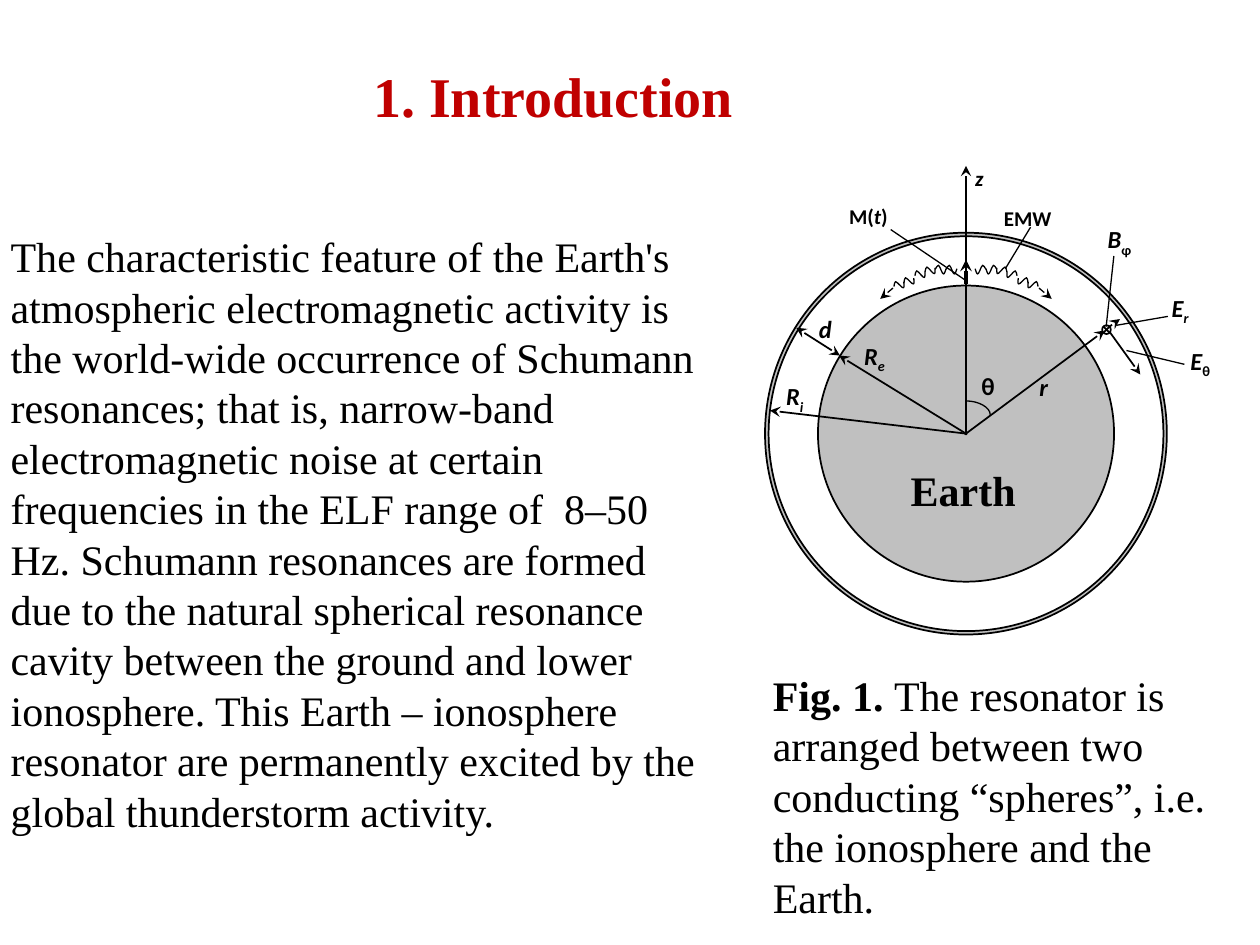
from lxml import etree
from pptx import Presentation
from pptx.dml.color import RGBColor
from pptx.enum import shapes, text
from pptx.oxml import ns
from pptx.util import Pt

COLORS = {"ink": "000000", "title": "C00000", "earth": "C0C0C0", "paper": "FFFFFF"}
SERIF, SANS = "Times New Roman", "Calibri"


def color(name):
    return RGBColor.from_string(COLORS[name])


def place(shape, box):
    shape.left, shape.top, shape.width, shape.height = (Pt(length) for length in box)


def write(shape, runs, size, font_name, ink="ink", grow=False):
    """Fill one paragraph from (text, style) pairs; style letters: b, i, s for subscript."""
    frame = shape.text_frame
    frame.word_wrap = True
    frame.vertical_anchor = text.MSO_ANCHOR.TOP
    frame.auto_size = (text.MSO_AUTO_SIZE.SHAPE_TO_FIT_TEXT if grow
                       else text.MSO_AUTO_SIZE.NONE)
    paragraph = frame.paragraphs[0]
    paragraph.alignment = text.PP_ALIGN.LEFT
    for words, style in runs:
        run = paragraph.add_run()
        run.text = words
        font = run.font
        font.name, font.size = font_name, Pt(size)
        font.bold, font.italic = "b" in style, "i" in style
        font.color.rgb = color(ink)
        if "s" in style:
            run._r.get_or_add_rPr().set("baseline", "-25000")


def add_text(parent, box, runs, size, font_name=SERIF, grow=True):
    shape = parent.shapes.add_textbox(*(Pt(length) for length in box))
    write(shape, runs, size, font_name, grow=grow)


def add_disc(group, center, radius, fill, kind=shapes.MSO_SHAPE.OVAL):
    x, y = center
    shape = group.shapes.add_shape(
        kind, Pt(x - radius), Pt(y - radius), Pt(2 * radius), Pt(2 * radius))
    shape.shadow.inherit = False
    shape.fill.solid()
    shape.fill.fore_color.rgb = color(fill)
    shape.line.color.rgb = color("ink")
    shape.line.width = Pt(1)


def add_line(group, start, end, width=0.75, arrows=()):
    connector = group.shapes.add_connector(
        shapes.MSO_CONNECTOR.STRAIGHT, *(Pt(length) for length in (*start, *end)))
    connector.line.color.rgb = color("ink")
    connector.line.width = Pt(width)
    outline = connector.line._get_or_add_ln()
    for arrow in arrows:
        etree.SubElement(outline, ns.qn(f"a:{arrow}")).set("type", "stealth")
    etree.SubElement(connector._element.spPr, ns.qn("a:effectLst"))


def add_curve(group, points, rotation=0):
    """Draw chained cubic curves: a start, then three points for each curve."""
    start, *track = [(Pt(x), Pt(y)) for x, y in points]
    builder = group.shapes.build_freeform(*start)
    builder.add_line_segments(track, close=False)
    shape = builder.convert_to_shape()
    # Gather each three line segments into one cubic curve
    segments = list(shape._element.iter(ns.qn("a:lnTo")))
    outline = segments[0].getparent()
    for first in range(0, len(segments), 3):
        curve = etree.SubElement(outline, ns.qn("a:cubicBezTo"))
        for segment in segments[first:first + 3]:
            curve.append(segment[0])
            outline.remove(segment)
    shape.shadow.inherit = False
    shape.fill.background()
    shape.line.color.rgb = color("ink")
    shape.line.width = Pt(0.75)
    shape.rotation = rotation


def add_waves(group, at):
    """Two mirrored trains of ripples, each ending in an arrow."""
    ripple = [(-3.1, -0.2), (-2.4, -1.4), (-1.7, -2.6), (-1.2, -2.5), (-0.6, -2.4),
              (-0.1, -0.4), (0.4, 0.5), (0.9, 1.4), (1.2, 2.6), (1.7, 2.5),
              (2.2, 2.5), (2.8, 0.4), (3.1, -0.5)]
    train = [(8.3, -93.7, 0), (14.5, -93.7, 0), (20.4, -93.2, 19),
             (26.2, -91, 19), (32.5, -87.2, 21.9), (38.2, -85, 21.9)]
    for side in (-1, 1):
        for x, y, angle in train:
            add_curve(group, [at(side * (x - dx), y + dy) for dx, dy in ripple],
                      side * angle % 360)
        add_line(group, at(side * 41.7, -83.2), at(side * 49, -77), arrows=["tailEnd"])


def add_resonator(slide, box):
    """Earth inside the ionosphere; offsets are measured from the common centre."""
    left, top, size, _ = box
    group = slide.shapes.add_group_shape()

    def at(x, y):
        return left + size / 2 + x, top + size / 2 + y

    # Ionosphere shell, Earth and centre point
    for radius, fill in ((size / 2, "earth"), (112.8, "paper"), (84.6, "earth"), (0.4, "paper")):
        add_disc(group, at(0, 0), radius, fill)

    # Axis, dipole, waves and polar angle
    add_line(group, at(0, 0), at(0, -153), 1, ["tailEnd"])
    add_line(group, at(0, -99.4), at(0, -85.7), 2.25, ["headEnd"])
    add_waves(group, at)
    add_curve(group, [at(0, -18.7), at(7.2, -18.7), at(13.9, -15.1), at(13.9, -10.8)])

    # Radii, gap between spheres and field vectors
    for start, end, arrows in (
            ((0, 0), (-72.5, -44.6), ["tailEnd"]),
            ((0, 0), (-112, -13.2), ["tailEnd"]),
            ((0, 0), (79.4, -59), ["tailEnd"]),
            ((-72, -44.6), (-97, -60.5), ["headEnd", "tailEnd"]),
            ((78, -58.3), (88, -65.5), ["tailEnd"]),
            ((80.9, -59.8), (99.6, -33.8), ["tailEnd"])):
        add_line(group, at(*start), at(*end), 1, arrows)
    add_disc(group, at(80.3, -59.4), 2.5, "paper",
             shapes.MSO_SHAPE.FLOWCHART_SUMMING_JUNCTION)

    # Leaders
    for start, end in (((80.1, -61.2), (84.5, -101.5)), ((85.9, -61.9), (115.4, -67)),
                       ((91.7, -47.5), (124.8, -39.6)), ((-43, -116.6), (-0.5, -87.8)),
                       ((36.9, -118), (22.5, -94.3))):
        add_line(group, at(*start), at(*end))

    # Labels
    for x, y, width, points, runs in (
            (34.8, -38.9, 30, 14, [("r", "bi")]),
            (1.7, -39.6, 30, 14, [("θ", "b")]),
            (73.9, -123.1, 30, 14, [("B", "bi"), ("φ", "bs")]),
            (121.2, -53.7, 30, 14, [("E", "bi"), ("θ", "bs")]),
            (110.4, -83.9, 30, 14, [("E", "bi"), ("r", "bis")]),
            (-65.3, -56.6, 30, 14, [("R", "bi"), ("e", "bis")]),
            (-109.9, -33.4, 30, 14, [("R", "bi"), ("i", "bis")]),
            (-91.2, -71.7, 30, 14, [("d", "bi")]),
            (-1.9, -157, 30, 12, [("z", "bi")]),
            (-73.9, -135, 52, 12, [("M(", "b"), ("t", "bi"), (")", "b")]),
            (14.6, -133.9, 52, 12, [("EMW", "b")])):
        add_text(group, (*at(x, y), width, 30), runs, points, SANS, grow=False)


def add_title(slide, box):
    title = slide.shapes.title
    place(title, box)
    write(title, [("1. Introduction", "b")], 32, SERIF, "title", grow=True)


def add_body(slide, box):
    add_text(slide, box, [(
        "The characteristic feature of the Earth's atmospheric electromagnetic activity is "
        "the world-wide occurrence of Schumann resonances; that is, narrow-band "
        "electromagnetic noise at certain frequencies in the ELF range of  8–50 Hz. "
        "Schumann resonances are formed due to the natural spherical resonance cavity "
        "between the ground and lower ionosphere. This Earth – ionosphere resonator are "
        "permanently excited by the global thunderstorm activity.", "")], 24)


def add_caption(slide, box):
    add_text(slide, box, [("Fig. 1. ", "b"), (
        "The resonator is arranged between two conducting “spheres”, i.e. the ionosphere "
        "and the Earth.", "")], 24)


def main():
    presentation = Presentation()
    presentation.slide_width, presentation.slide_height = Pt(720), Pt(540)
    slide = presentation.slides.add_slide(presentation.slide_layouts[5])
    add_body(slide, (-1, 128.3, 417.6, 356.4))
    add_title(slide, (206, 31.7, 244.8, 46))
    add_resonator(slide, (437.2, 133, 229.6, 229.6))
    add_caption(slide, (434.5, 379, 279.4, 152.6))
    add_text(slide, (513.3, 261.8, 84, 36), [("Earth", "b")], 24)
    presentation.save("out.pptx")


if __name__ == "__main__":
    main()
